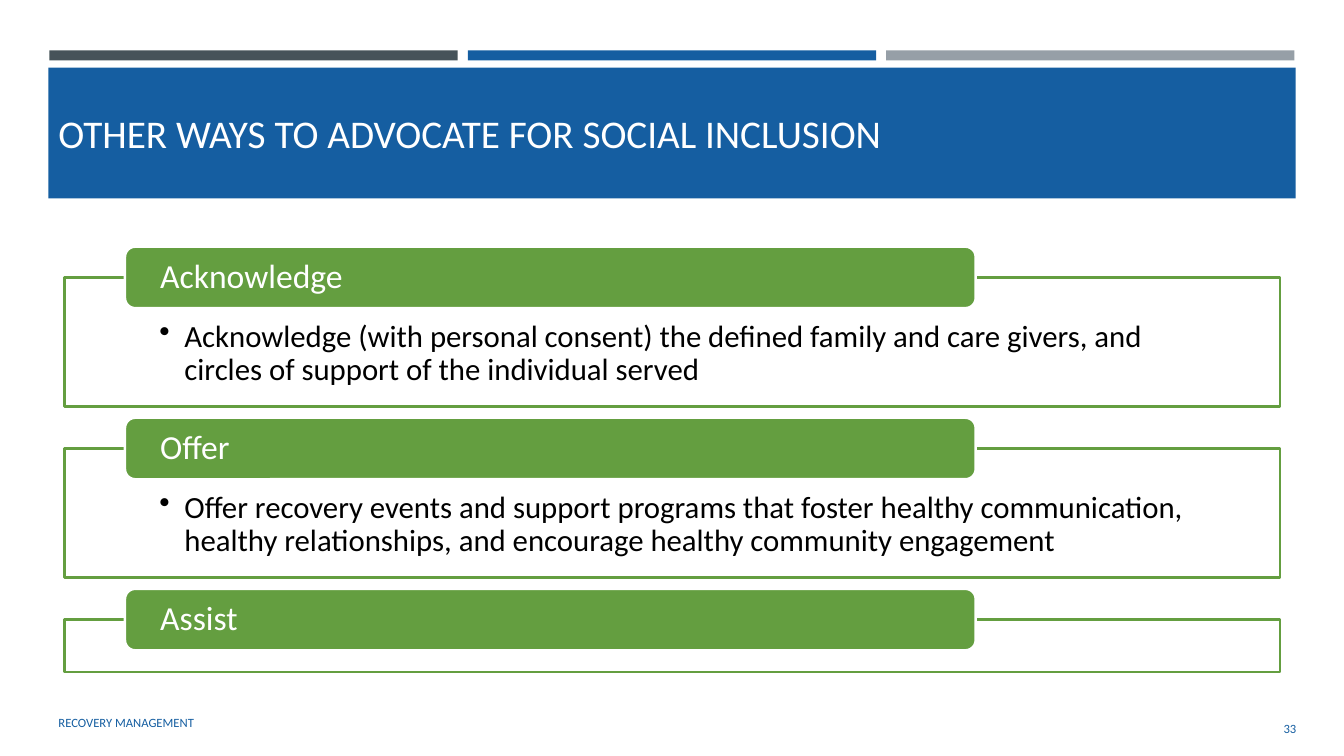
import pptx
import pptx.dml.color
import pptx.enum.shapes
import pptx.enum.text
import pptx.oxml
import pptx.oxml.ns
import pptx.util

THEME = {
    "font": "Calibri",
    "slate": "465359", "blue": "155EA1", "gray": "969FA7",
    "green": "649E40", "white": "FFFFFF", "black": "000000",
    "title": 28, "heading": 24, "body": 22, "footer": 9,
    "outline": 1.75,
}
RECTANGLE = pptx.enum.shapes.MSO_SHAPE.RECTANGLE
ROUNDED = pptx.enum.shapes.MSO_SHAPE.ROUNDED_RECTANGLE
ANCHOR = pptx.enum.text.MSO_ANCHOR
ALIGN = pptx.enum.text.PP_ALIGN

presentation = pptx.Presentation()
presentation.slide_width = pptx.util.Inches(13.33)
presentation.slide_height = pptx.util.Inches(7.5)
slide = presentation.slides.add_slide(presentation.slide_layouts[6])
column = presentation.slide_width / 100
row = presentation.slide_height / 100


def add_box(kind, left, top, width, height, fill=None, line=None):
    place = (int(left * column), int(top * row), int(width * column), int(height * row))
    if kind is None:
        return slide.shapes.add_textbox(*place)
    shape = slide.shapes.add_shape(kind, *place)
    shape.shadow.inherit = False
    shape.fill.solid()
    shape.fill.fore_color.rgb = pptx.dml.color.RGBColor.from_string(THEME[fill])
    if line:
        shape.line.color.rgb = pptx.dml.color.RGBColor.from_string(THEME[line])
        shape.line.width = pptx.util.Pt(THEME["outline"])
    else:
        shape.line.fill.background()
    return shape


def write_text(shape, text, size, color, anchor=ANCHOR.MIDDLE, align=ALIGN.LEFT,
               side=0.75, above=0.67, below=0.67, spacing=1.0, bullet=False):
    frame = shape.text_frame
    frame.word_wrap = True
    frame.vertical_anchor = anchor
    frame.margin_left = frame.margin_right = int(side * column)
    frame.margin_top, frame.margin_bottom = int(above * row), int(below * row)
    paragraph = frame.paragraphs[0]
    paragraph.alignment = align
    paragraph.line_spacing = spacing
    run = paragraph.add_run()
    run.text = text
    run.font.name = THEME["font"]
    run.font.size = pptx.util.Pt(THEME[size])
    run.font.color.rgb = pptx.dml.color.RGBColor.from_string(THEME[color])
    if bullet:
        properties = paragraph._p.get_or_add_pPr()
        indent = pptx.util.Inches(0.25)
        properties.set("marL", str(indent))
        properties.set("indent", str(-indent))
        properties.append(pptx.oxml.parse_xml(
            f'<a:buChar {pptx.oxml.ns.nsdecls("a")} char="•"/>'))


for index, color in enumerate(("slate", "blue", "gray")):
    add_box(RECTANGLE, 3.68 + index * 31.13, 6.67, 30.38, 1.33, color)

add_box(RECTANGLE, 3.6, 8.93, 92.8, 17.33, "blue")
title = add_box(None, 3.6, 6.53, 90.45, 14.8)
write_text(title, "OTHER WAYS TO ADVOCATE FOR SOCIAL INCLUSION", "title", "white",
           anchor=ANCHOR.BOTTOM)

sections = [
    ("Acknowledge", "Acknowledge (with personal consent) the defined family and care "
     "givers, and circles of support of the individual served"),
    ("Offer", "Offer recovery events and support programs that foster healthy "
     "communication, healthy relationships, and encourage healthy community engagement"),
    ("Assist", ""),
]
for index, (heading, detail) in enumerate(sections):
    top = 36.7 + index * 22.63
    panel = add_box(RECTANGLE, 4.8, top, 90.45, 17.07 if detail else 6.93, "white", "green")
    if detail:
        write_text(panel, detail, "body", "black", anchor=ANCHOR.TOP, side=7.05,
                   above=5.73, below=2.27, spacing=0.9, bullet=True)
    label = add_box(ROUNDED, 9.3, top - 4.07, 63.3, 8.13, "green", "white")
    write_text(label, heading, "heading", "white", side=2.4, above=0, below=0, spacing=0.9)

footer = add_box(None, 3.6, 92.93, 55.95, 5.33)
write_text(footer, "RECOVERY MANAGEMENT", "footer", "blue")
number = add_box(None, 88.58, 93.73, 8.62, 5.33)
write_text(number, "33", "footer", "blue", align=ALIGN.RIGHT)

presentation.save("out.pptx")
